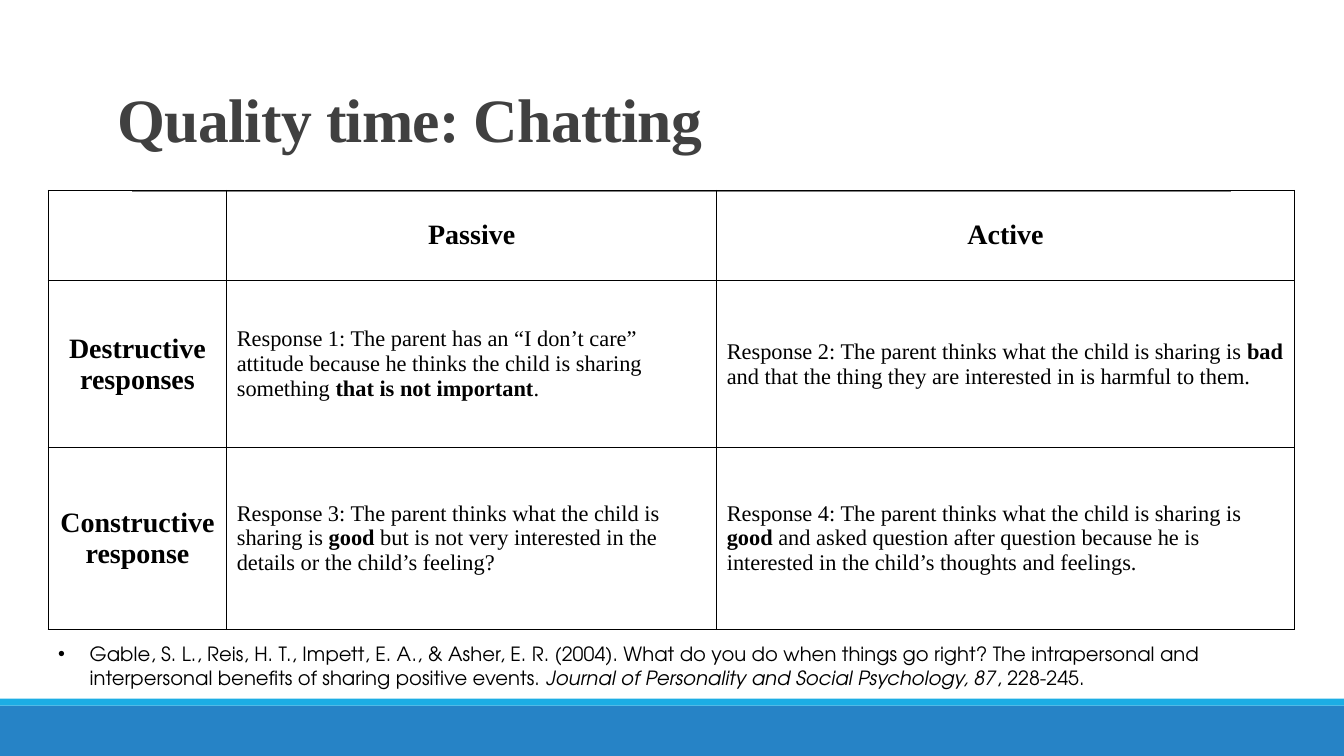
import pptx
import pptx.dml.color
import pptx.enum.shapes
import pptx.enum.text
import pptx.oxml
import pptx.oxml.ns
import pptx.util
import lxml.etree

Pt = pptx.util.Pt
RGB = pptx.dml.color.RGBColor
Align = pptx.enum.text.PP_ALIGN
Anchor = pptx.enum.text.MSO_ANCHOR

BLACK = RGB(0x00, 0x00, 0x00)
DARK = RGB(0x40, 0x40, 0x40)
GRAY = RGB(0x80, 0x80, 0x80)
BLUE = RGB(0x26, 0x83, 0xC6)
CYAN = RGB(0x1C, 0xAD, 0xE4)
SERIF = "Times New Roman"
SANS = "TeX Gyre Adventor"
WIDTH, HEIGHT = 960, 540

COLS = [127.5, 350, 412.5]
ROWS = [64.3, 119.5, 129.6]
HEADS = ["Passive", "Active"]
# Each body row: its label, then cells whose odd-numbered pieces are bold.
BODY = [
    ("Destructive responses", [
        ["Response 1: The parent has an “I don’t care” attitude because he "
         "thinks the child is sharing something ", "that is not important", "."],
        ["Response 2: The parent thinks what the child is sharing is ", "bad",
         " and that the thing they are interested in is harmful to them."],
    ]),
    ("Constructive response", [
        ["Response 3: The parent thinks what the child is sharing is ", "good",
         " but is not very interested in the details or the child’s feeling?"],
        ["Response 4: The parent thinks what the child is sharing is ", "good",
         " and asked question after question because he is interested in the "
         "child’s thoughts and feelings."],
    ]),
]
CITE = [
    "Gable, S. L., Reis, H. T., Impett, E. A., & Asher, E. R. (2004). What do you "
    "do when things go right? The intrapersonal and interpersonal benefits of "
    "sharing positive events. ",
    "Journal of Personality and Social Psychology, 87",
    ", 228-245.",
]


def node(parent, tag, **attrs):
    """Append a drawing element to parent."""
    child = lxml.etree.SubElement(parent, pptx.oxml.ns.qn(tag))
    for key, value in attrs.items():
        child.set(key, str(value))
    return child


class Page:
    def __init__(self, slide, font, color):
        self.slide, self.font, self.color = slide, font, color

    def run(self, para, text, size, bold=False, italic=False, font=None, color=None):
        run = para.add_run()
        run.text = text
        style = run.font
        style.name, style.size = font or self.font, Pt(size)
        style.bold, style.italic = bold, italic
        style.color.rgb = color or self.color
        return run

    def bar(self, top, height, color):
        kind = pptx.enum.shapes.MSO_SHAPE.RECTANGLE
        bar = self.slide.shapes.add_shape(kind, 0, Pt(top), Pt(WIDTH), Pt(height))
        bar.shadow.inherit = False
        bar.fill.solid()
        bar.fill.fore_color.rgb = color
        bar.line.fill.background()

    def rule(self, left, right, y):
        kind = pptx.enum.shapes.MSO_CONNECTOR.STRAIGHT
        rule = self.slide.shapes.add_connector(kind, Pt(left), Pt(y), Pt(right), Pt(y))
        rule.line.color.rgb = GRAY
        rule.line.width = Pt(0.5)
        node(rule._element.spPr, "a:effectLst")

    def box(self, left, top, width, height, anchor=Anchor.TOP):
        """Add a text box and return its first paragraph."""
        box = self.slide.shapes.add_textbox(Pt(left), Pt(top), Pt(width), Pt(height))
        frame = box.text_frame
        frame.word_wrap = True
        frame.vertical_anchor = anchor
        return frame.paragraphs[0]

    def title(self, text):
        para = self.box(77, 0, 792, 114.5, Anchor.BOTTOM)
        para.line_spacing = 0.85
        run = self.run(para, text, 44, bold=True, color=DARK)
        run.font._element.set("spc", "-50")

    def cite(self, parts):
        para = self.box(34.5, 455, 891, 41)
        props = para._p.get_or_add_pPr()
        props.set("marL", str(Pt(22.5)))
        props.set("indent", str(Pt(-22.5)))
        node(node(props, "a:buClr"), "a:srgbClr", val=BLACK)
        node(props, "a:buFont", typeface="Arial")
        node(props, "a:buChar", char="•")
        for i, part in enumerate(parts):
            self.run(para, part, 14, italic=i % 2 == 1, font=SANS)

    def grid(self, left, top, cols, rows):
        """Add an empty table with black borders and no fill."""
        frame = self.slide.shapes.add_table(
            len(rows), len(cols), Pt(left), Pt(top), Pt(sum(cols)), Pt(sum(rows)))
        table = frame.table
        table.first_row = table.horz_banding = False
        for col, width in zip(table.columns, cols):
            col.width = Pt(width)
        for row, height in zip(table.rows, rows):
            row.height = Pt(height)
        for cell in table.iter_cells():
            cell.vertical_anchor = Anchor.MIDDLE
            props = cell._tc.get_or_add_tcPr()
            for side in ("a:lnL", "a:lnR", "a:lnT", "a:lnB"):
                edge = node(props, side, w=Pt(1))
                node(node(edge, "a:solidFill"), "a:srgbClr", val=BLACK)
            cell.fill.background()
        return table

    def head(self, cell, text):
        para = cell.text_frame.paragraphs[0]
        para.alignment = Align.CENTER
        self.run(para, text, 20, bold=True)

    def reply(self, cell, parts):
        para = cell.text_frame.paragraphs[0]
        for i, part in enumerate(parts):
            self.run(para, part, 16, bold=i % 2 == 1)


def main():
    deck = pptx.Presentation()
    deck.slide_width, deck.slide_height = Pt(WIDTH), Pt(HEIGHT)
    page = Page(deck.slides.add_slide(deck.slide_layouts[6]), SERIF, BLACK)

    page.bar(504, 36, BLUE)
    page.bar(499, 5, CYAN)
    page.rule(94.5, 879, 136.8)
    page.cite(CITE)

    table = page.grid(34.5, 136, COLS, ROWS)
    for c, text in enumerate(HEADS, 1):
        page.head(table.cell(0, c), text)
    for r, (label, replies) in enumerate(BODY, 1):
        page.head(table.cell(r, 0), label)
        for c, parts in enumerate(replies, 1):
            page.reply(table.cell(r, c), parts)

    page.title("Quality time: Chatting")
    deck.save("out.pptx")


if __name__ == "__main__":
    main()
